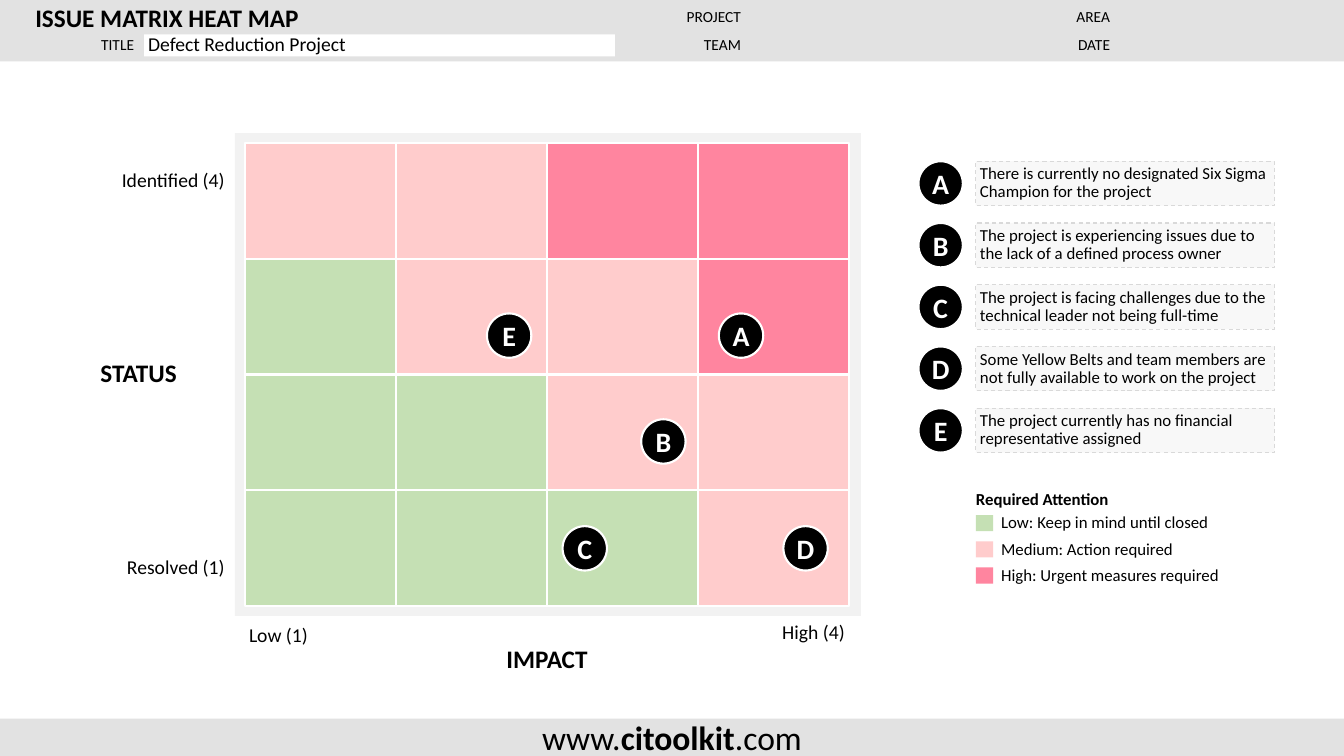
from lxml import etree
from pptx import Presentation
from pptx.dml.color import RGBColor
from pptx.enum import dml, shapes, text
from pptx.oxml import ns
from pptx.util import Inches, Pt

BLACK = RGBColor(0x00, 0x00, 0x00)
WHITE = RGBColor(0xFF, 0xFF, 0xFF)
BAND = RGBColor(0xE2, 0xE2, 0xE2)
PANEL = RGBColor(0xF2, 0xF2, 0xF2)
DASH = RGBColor(0xD9, 0xD9, 0xD9)
LOW = RGBColor(0xC5, 0xE0, 0xB4)
MEDIUM = RGBColor(0xFF, 0xCC, 0xCC)
HIGH = RGBColor(0xFF, 0x85, 0x9F)

FONT = "Calibri"
LEFT, CENTER, RIGHT = text.PP_ALIGN.LEFT, text.PP_ALIGN.CENTER, text.PP_ALIGN.RIGHT
RECTANGLE, OVAL = shapes.MSO_SHAPE.RECTANGLE, shapes.MSO_SHAPE.OVAL
MARKER_SIZE = 0.44

HEAT = [
    [MEDIUM, MEDIUM, HIGH, HIGH],
    [LOW, MEDIUM, MEDIUM, HIGH],
    [LOW, LOW, MEDIUM, MEDIUM],
    [LOW, LOW, LOW, MEDIUM],
]
# Marker offsets from the top left of the matrix panel
MARKERS = {"A": (4.8, 1.79), "B": (4.03, 2.84), "C": (3.25, 3.9),
           "D": (5.44, 3.9), "E": (2.5, 1.79)}
ISSUES = {
    "A": "There is currently no designated Six Sigma Champion for the project",
    "B": "The project is experiencing issues due to the lack of a defined process owner",
    "C": "The project is facing challenges due to the technical leader not being full-time",
    "D": "Some Yellow Belts and team members are not fully available to work on the project",
    "E": "The project currently has no financial representative assigned",
}
LEGEND = [("Low: Keep in mind until closed", LOW),
          ("Medium: Action required", MEDIUM),
          ("High: Urgent measures required", HIGH)]


def add_block(slide, kind, left, top, width, height, fill, line=None, weight=1.5):
    shape = slide.shapes.add_shape(
        kind, Inches(left), Inches(top), Inches(width), Inches(height))
    shape.shadow.inherit = False
    shape.fill.solid()
    shape.fill.fore_color.rgb = fill
    if line is None:
        shape.line.fill.background()
    else:
        shape.line.color.rgb = line
        shape.line.width = Pt(weight)
    return shape


def write(shape, paragraphs, size, align=LEFT, color=BLACK, inset=0.04,
          wrap=True, spacing=None, after=None):
    """Each paragraph is a list of (words, bold) runs."""
    frame = shape.text_frame
    frame.word_wrap = wrap
    frame.vertical_anchor = text.MSO_ANCHOR.MIDDLE
    frame.margin_left = frame.margin_right = Inches(inset)
    frame.margin_top = frame.margin_bottom = Inches(inset)
    for index, runs in enumerate(paragraphs):
        paragraph = frame.add_paragraph() if index else frame.paragraphs[0]
        paragraph.alignment = align
        if spacing is not None:
            paragraph.line_spacing = spacing
        if after is not None:
            paragraph.space_after = Pt(after)
        for words, bold in runs:
            run = paragraph.add_run()
            run.text = words
            run.font.name = FONT
            run.font.size = Pt(size)
            run.font.bold = bold
            run.font.color.rgb = color


def add_label(slide, left, top, width, height, words, size, bold=False, **options):
    box = slide.shapes.add_textbox(
        Inches(left), Inches(top), Inches(width), Inches(height))
    write(box, [[(words, bold)]], size, **options)


def add_marker(slide, left, top, letter):
    marker = add_block(slide, OVAL, left, top, MARKER_SIZE, MARKER_SIZE, BLACK, WHITE)
    write(marker, [[(letter, True)]], 20, CENTER, WHITE, inset=0, wrap=False)


def add_header(slide, left, top, width, height):
    add_block(slide, RECTANGLE, left, top, width, height, BAND)
    add_label(slide, left + 0.31, top, 5.79, 0.34, "ISSUE MATRIX HEAT MAP", 18, True)
    fields = [("TITLE", 0.15, 0.33, 1.22), ("PROJECT", 6.25, 0.05, 1.14),
              ("TEAM", 6.25, 0.33, 1.14), ("AREA", 10.24, 0.05, 0.81),
              ("DATE", 10.24, 0.33, 0.81)]
    for words, x, y, field_width in fields:
        add_label(slide, left + x, top + y, field_width, 0.23, words, 11, align=RIGHT)
    title = add_block(slide, RECTANGLE, left + 1.43, top + 0.34, 4.67, 0.22, WHITE)
    write(title, [[("Defect Reduction Project", False)]], 14, spacing=0.9)


def add_footer(slide, left, top, width, height):
    footer = add_block(slide, RECTANGLE, left, top, width, height, BAND)
    write(footer, [[("www.", False), ("citoolkit", True), (".com", False)]], 24, CENTER)


def add_matrix(slide, left, top, width, height):
    add_block(slide, RECTANGLE, left, top, width, height, PANEL)

    # Heat cells
    margin = 0.1
    cell_width = (width - 2 * margin) / 4 - 0.005
    cell_height = (height - 2 * margin) / 4
    for row, colors in enumerate(HEAT):
        for column, color in enumerate(colors):
            add_block(slide, RECTANGLE, left + margin + column * cell_width,
                      top + margin + row * cell_height,
                      cell_width, cell_height, color, WHITE)

    # Axis names and end labels
    labels = [
        ("Low (1)", 0.1, 4.85, 0.67, LEFT), ("High (4)", 5.38, 4.82, 0.71, RIGHT),
        ("Identified (4)", -1.27, 0.33, 1.21, RIGHT),
        ("Resolved (1)", -1.27, 4.17, 1.21, RIGHT),
    ]
    for words, x, y, label_width, align in labels:
        add_label(slide, left + x, top + y, label_width, 0.29, words, 14,
                  align=align, wrap=False, spacing=0.9)
    for words, x, y, label_width in [("IMPACT", 2.64, 5.06, 0.91),
                                     ("STATUS", -1.63, 2.22, 1.35)]:
        add_label(slide, left + x, top + y, label_width, 0.35, words, 18, True,
                  align=CENTER, wrap=False, spacing=0.9)

    # Issues on the map
    for letter, (x, y) in MARKERS.items():
        add_marker(slide, left + x, top + y, letter)


def add_issue_list(slide, left, top, width, height):
    pitch = (height - MARKER_SIZE) / (len(ISSUES) - 1)
    for index, (letter, words) in enumerate(ISSUES.items()):
        y = top + index * pitch
        add_marker(slide, left, y, letter)
        note = add_block(slide, RECTANGLE, left + 0.57, y, width - 0.57,
                         MARKER_SIZE, PANEL, DASH, 0.75)
        note.line.dash_style = dml.MSO_LINE.DASH
        # Half-transparent fill
        fill_color = note.fill._xPr.find(ns.qn("a:solidFill"))[0]
        etree.SubElement(fill_color, ns.qn("a:alpha")).set("val", "50000")
        write(note, [[(words, False)]], 12, spacing=0.9)


def add_legend(slide, left, top, width, height):
    add_label(slide, left, top, 1.33, 0.2, "Required Attention", 12, True,
              inset=0, wrap=False)
    entries = slide.shapes.add_textbox(
        Inches(left + 0.25), Inches(top + 0.23), Inches(width - 0.25), Inches(height - 0.23))
    write(entries, [[(words, False)] for words, _ in LEGEND], 12, inset=0, after=4.3)
    for index, (_, color) in enumerate(LEGEND):
        add_block(slide, RECTANGLE, left, top + 0.26 * (index + 1), 0.17, 0.16, color)


def main():
    presentation = Presentation()
    presentation.slide_width = Inches(13.33)
    presentation.slide_height = Inches(7.5)
    slide = presentation.slides.add_slide(presentation.slide_layouts[6])
    add_footer(slide, 0, 7.13, 13.33, 0.37)
    add_header(slide, 0, 0, 13.33, 0.61)
    add_matrix(slide, 2.33, 1.32, 6.21, 4.79)
    add_issue_list(slide, 9.11, 1.6, 3.53, 2.89)
    add_legend(slide, 9.68, 4.85, 2.62, 0.95)
    presentation.save("out.pptx")


if __name__ == "__main__":
    main()
